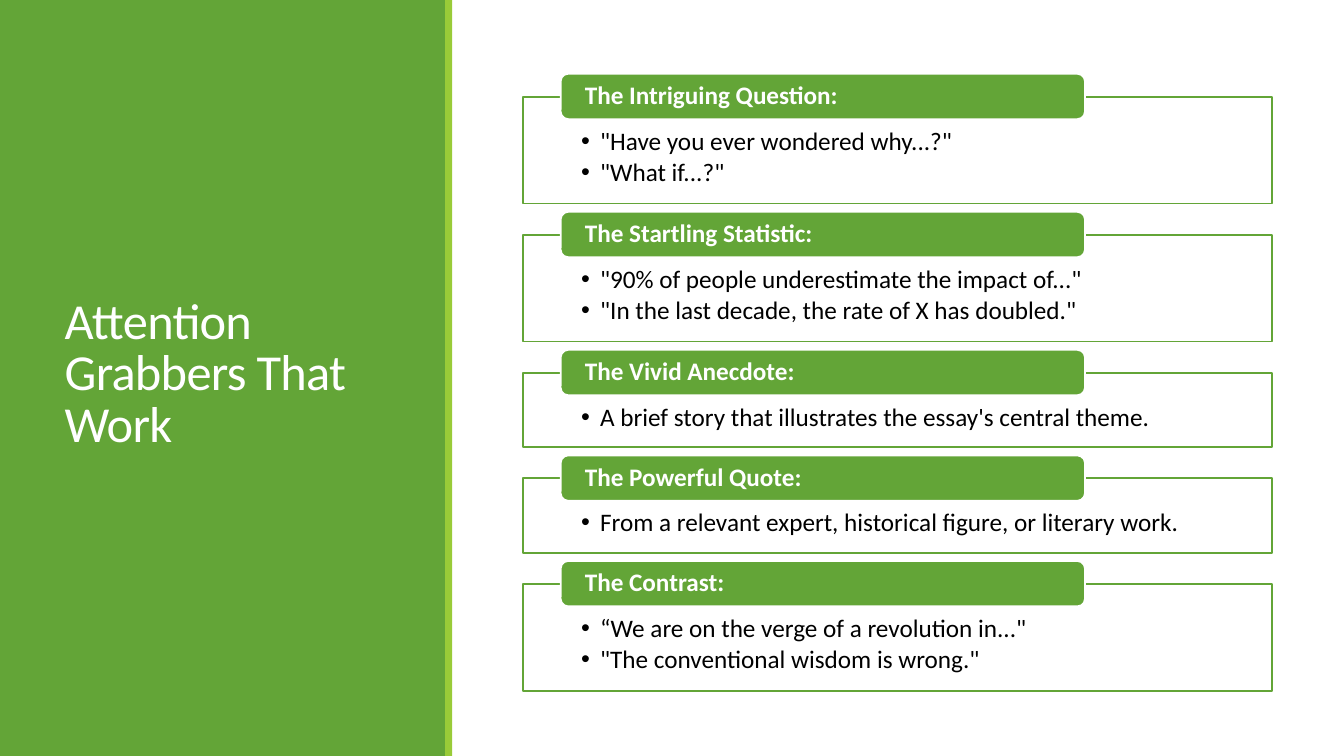
from lxml import etree
from pptx import Presentation
from pptx.dml.color import RGBColor
from pptx.enum.shapes import MSO_SHAPE
from pptx.enum.text import MSO_ANCHOR, MSO_AUTO_SIZE, PP_ALIGN
from pptx.oxml.ns import qn
from pptx.util import Pt

RECT, ROUNDED = MSO_SHAPE.RECTANGLE, MSO_SHAPE.ROUNDED_RECTANGLE
TOP, MIDDLE = MSO_ANCHOR.TOP, MSO_ANCHOR.MIDDLE
LEFT = PP_ALIGN.LEFT

TITLE = "Attention Grabbers That Work"
GRABBERS = [
    ("The Intriguing Question:",
     ['"Have you ever wondered why...?"', '"What if...?"']),
    ("The Startling Statistic:",
     ['"90% of people underestimate the impact of..."',
      '"In the last decade, the rate of X has doubled."']),
    ("The Vivid Anecdote:",
     ["A brief story that illustrates the essay's central theme."]),
    ("The Powerful Quote:",
     ["From a relevant expert, historical figure, or literary work."]),
    ("The Contrast:",
     ['“We are on the verge of a revolution in..."',
      '"The conventional wisdom is wrong."']),
]

FONT = "Calibri"
GREEN, LIME, WHITE, BLACK = "63A537", "99CB38", "FFFFFF", "000000"
SLIDE_W, SLIDE_H = 960, 540
PANEL_W, STRIPE_X, STRIPE_W = 319, 318, 5
BOX_X, BOX_W, FIRST_BOX_Y, BOX_GAP = 373.7, 535, 69.1, 22.3
BOX_H = {1: 53.1, 2: 76.3}  # by number of bullets
LABEL_X, LABEL_W, LABEL_H, LABEL_RISE = 400.5, 374.5, 32.4, 16.4
BULLET_INDENT = 13.5


def rgb(color):
    return RGBColor.from_string(color)


def add_box(s, kind, x, y, w, h, fill, line=None):
    sp = s.shapes.add_shape(kind, Pt(x), Pt(y), Pt(w), Pt(h))
    sp.shadow.inherit = False
    sp.fill.solid()
    sp.fill.fore_color.rgb = rgb(fill)
    if line:
        sp.line.color.rgb = rgb(line)
        sp.line.width = Pt(1.25)
    else:
        sp.line.fill.background()
    return sp


def set_text(sp, lines, size, color, insets, anchor, spacing, after=0, bold=False):
    tf = sp.text_frame
    tf.word_wrap = True
    tf.auto_size = MSO_AUTO_SIZE.NONE
    tf.vertical_anchor = anchor
    tf.margin_left = tf.margin_right = Pt(insets[0])
    tf.margin_top, tf.margin_bottom = Pt(insets[1]), Pt(insets[2])
    tf.text = "\n".join(lines)
    for p in tf.paragraphs:
        p.alignment = LEFT
        p.line_spacing = spacing
        p.space_before, p.space_after = Pt(0), Pt(after)
        font = p.runs[0].font
        font.name, font.size, font.bold = FONT, Pt(size), bold
        font.color.rgb = rgb(color)


def add_bullets(tf):
    for p in tf.paragraphs:
        pPr = p._p.get_or_add_pPr()
        pPr.set("marL", str(Pt(BULLET_INDENT)))
        pPr.set("indent", str(-Pt(BULLET_INDENT)))
        etree.SubElement(pPr, qn("a:buFont")).set("typeface", "Arial")
        etree.SubElement(pPr, qn("a:buChar")).set("char", "•")


def add_grabber(s, heading, bullets, y):
    h = BOX_H[len(bullets)]
    box = add_box(s, RECT, BOX_X, y, BOX_W, h, WHITE, GREEN)
    white = box.fill._xPr.find(".//" + qn("a:srgbClr"))
    etree.SubElement(white, qn("a:alpha")).set("val", "90000")
    set_text(box, bullets, 18, BLACK, (41.5, 22.7, 10), TOP, 0.9, after=2.5)
    add_bullets(box.text_frame)
    label = add_box(s, ROUNDED, LABEL_X, y - LABEL_RISE, LABEL_W, LABEL_H, GREEN, WHITE)
    set_text(label, [heading], 18, WHITE, (15.7, 0, 0), MIDDLE, 0.9, bold=True)
    return y + h + BOX_GAP


def main():
    prs = Presentation()
    prs.slide_width, prs.slide_height = Pt(SLIDE_W), Pt(SLIDE_H)
    s = prs.slides.add_slide(prs.slide_layouts[5])

    add_box(s, RECT, 0, 0, PANEL_W, SLIDE_H, GREEN)
    add_box(s, RECT, STRIPE_X, 0, STRIPE_W, SLIDE_H, LIME)

    title = s.shapes.title
    title.left, title.top, title.width, title.height = Pt(39), Pt(41), Pt(242.5), Pt(454.5)
    set_text(title, [TITLE], 36, WHITE, (7.2, 3.6, 3.6), MIDDLE, 0.85)
    title.text_frame.paragraphs[0].runs[0]._r.get_or_add_rPr().set("spc", "-50")
    title.element.getparent().append(title.element)  # in front of the panel

    y = FIRST_BOX_Y
    for heading, bullets in GRABBERS:
        y = add_grabber(s, heading, bullets, y)

    prs.save("out.pptx")


if __name__ == "__main__":
    main()
